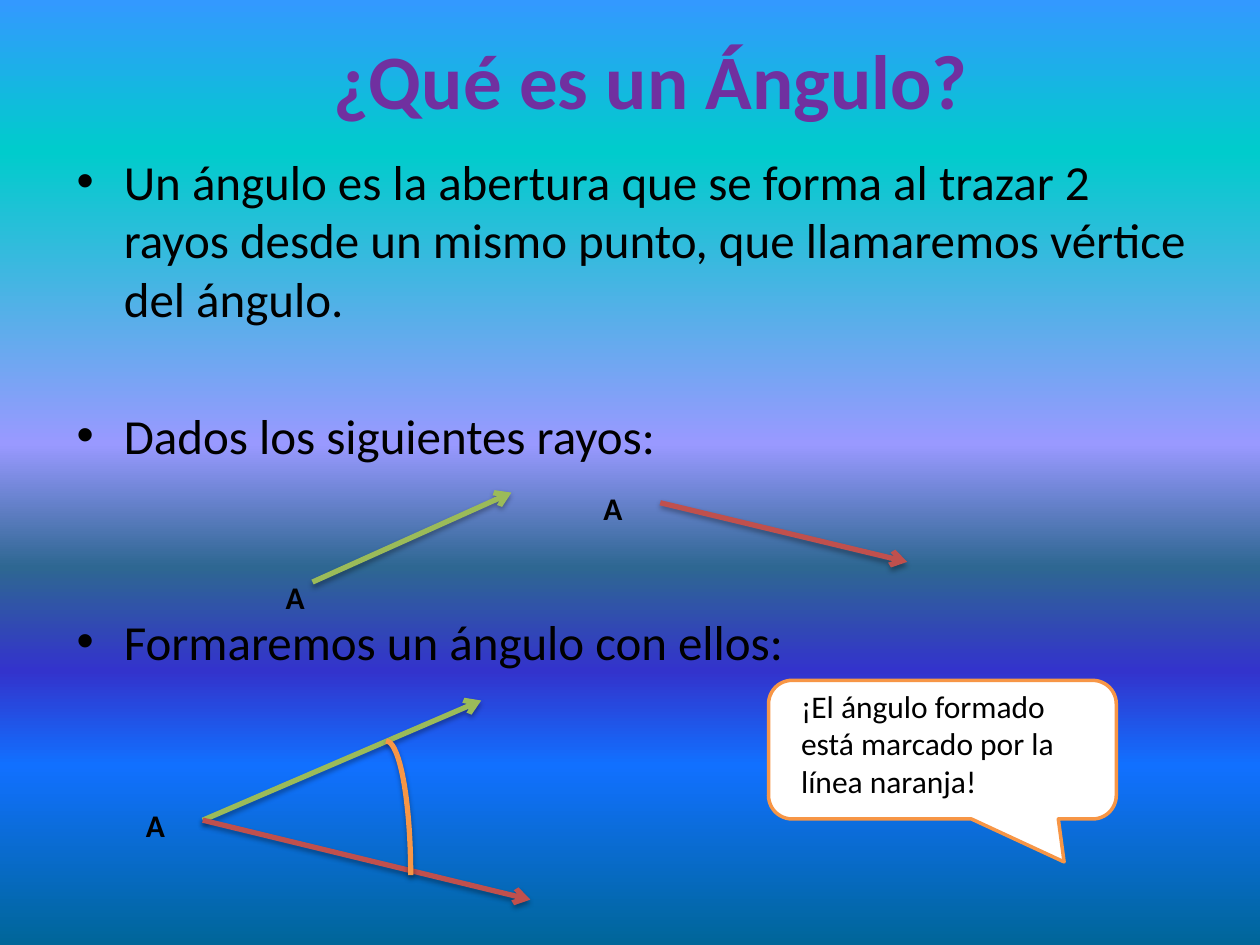
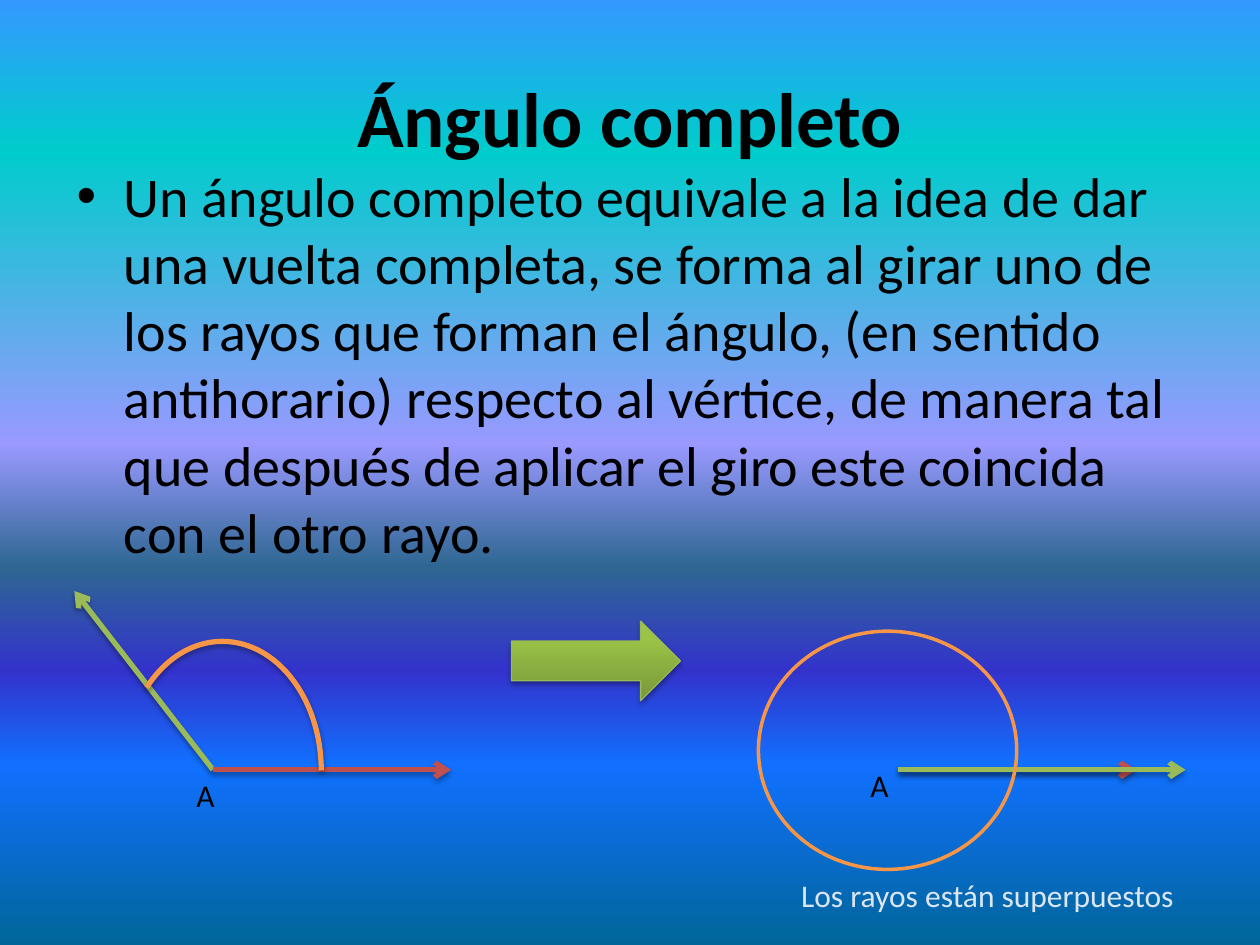
from lxml.etree import SubElement
from pptx import Presentation
from pptx.dml.color import RGBColor
from pptx.enum.shapes import MSO_CONNECTOR, MSO_SHAPE
from pptx.enum.text import MSO_ANCHOR, MSO_AUTO_SIZE, PP_ALIGN
from pptx.oxml.ns import qn
from pptx.util import Pt

HUES = {
    "black": "000000", "white": "FFFFFF", "purple": "7030A0", "pale": "DCE6F2",
    "green": "9BBB59", "red": "C0504D", "orange": "F79646", "edge": "98B955",
}
SKY = [(0, "3399FF"), (16, "00CCCC"), (47, "9999FF"), (60, "2E6792"),
       (71, "3333CC"), (81, "1170FF"), (100, "006699")]
LEAF = [(0, "779737"), (80, "9BC348"), (100, "9DC746")]
FRAME = {"word_wrap": True, "auto_size": MSO_AUTO_SIZE.NONE,
         "vertical_anchor": MSO_ANCHOR.TOP}
TITLE = {"size": Pt(44), "bold": True}
LABEL = {"size": Pt(18), "bold": False}


def hue(name):
    return RGBColor.from_string(HUES[name])


def apply(item, values):
    for key, value in values.items():
        setattr(item, key, value)


def points(*values):
    return [Pt(value) for value in values]


def node(parent, tag, **values):
    child = SubElement(parent, qn(tag))
    for key, value in values.items():
        child.set(key, str(value))
    return child


def blend(fill, root, stops, angle):
    fill.gradient()
    fill.gradient_angle = angle
    group = next(root.iter(qn("a:gsLst")))
    for stop in list(group):
        group.remove(stop)
    for place, color in stops:
        stop = node(group, "a:gs", pos=place * 1000)
        node(stop, "a:srgbClr", val=color)


def shade(shape):
    props = shape.element.spPr
    group = props.find(qn("a:effectLst"))
    if group is None:
        group = node(props, "a:effectLst")
    cast = node(group, "a:outerShdw", blurRad=Pt(3.1), dist=Pt(1.8),
                dir=5400000, rotWithShape=0)
    color = node(cast, "a:srgbClr", val=HUES["black"])
    node(color, "a:alpha", val=35000)


def stroke(line, color, width):
    line.color.rgb = hue(color)
    line.width = Pt(width)


def write(slide, box, lines, font, color="black", frame=None, align=PP_ALIGN.LEFT):
    text = slide.shapes.add_textbox(*points(*box)).text_frame
    apply(text, {**FRAME, **(frame or {})})
    for index, line in enumerate(lines):
        para = text.paragraphs[0] if index == 0 else text.add_paragraph()
        para.alignment = align
        run = para.add_run()
        run.text = line
        apply(run.font, {"name": "Calibri", **font})
        run.font.color.rgb = hue(color)
    return text


def title(slide, left, top, words, color="black"):
    write(slide, (left, top, 648, 90), [words], TITLE, color,
          {"vertical_anchor": MSO_ANCHOR.MIDDLE}, PP_ALIGN.CENTER)


def body(slide, top, size, items):
    lines = [line for line, gap in items]
    text = write(slide, (36.7, top, 648, 356.4), lines, {"size": Pt(size)})
    for para, (line, gap) in zip(text.paragraphs, items):
        para.space_before = Pt(gap)
        props = para._p.get_or_add_pPr()
        apply_indent = {"marL": Pt(27), "indent": Pt(-27)}
        for key, value in apply_indent.items():
            props.set(key, str(value))
        node(props, "a:buFont", typeface="Arial")
        node(props, "a:buChar", char="•")


def label(slide, box, words, color="black", bold=False):
    write(slide, box, [words], {**LABEL, "bold": bold}, color,
          {"auto_size": MSO_AUTO_SIZE.SHAPE_TO_FIT_TEXT})


def ray(slide, start, end, color):
    line = slide.shapes.add_connector(MSO_CONNECTOR.STRAIGHT, *points(*start, *end))
    stroke(line.line, color, 3)
    node(line.element.spPr.find(qn("a:ln")), "a:tailEnd", type="arrow")
    shade(line)


def outline(slide, kind, box, color, width, turns=()):
    shape = slide.shapes.add_shape(kind, *points(*box))
    shape.shadow.inherit = False
    shape.fill.background()
    stroke(shape.line, color, width)
    for index, turn in enumerate(turns):
        shape.adjustments[index] = turn
    return shape


def arc(slide, box, start):
    shade(outline(slide, MSO_SHAPE.ARC, box, "orange", 3, (start, 0)))


def page(deck):
    slide = deck.slides.add_slide(deck.slide_layouts[6])
    blend(slide.background.fill, slide.element, SKY, 270)
    return slide


def basics(deck):
    slide = page(deck)
    title(slide, 48, 0, "¿Qué es un Ángulo?", "purple")
    body(slide, 82.8, 28, [
        ("Un ángulo es la abertura que se forma al trazar 2 rayos desde un "
         "mismo punto, que llamaremos vértice del ángulo.", 0),
        ("Dados los siguientes rayos:", 44.5),
        ("Formaremos un ángulo con ellos:", 84),
    ])
    apex = (115.9, 468.7)
    for start, end, color in [
        ((178.6, 332.6), (292.3, 281.5), "green"),
        ((377.3, 287.3), (518.4, 321.1), "red"),
        (apex, (275, 400.3), "green"),
        (apex, (303.1, 514.1), "red"),
    ]:
        ray(slide, start, end, color)
    arc(slide, (206.6, 423.4, 28.1, 153.4), 162)
    bubble = outline(slide, MSO_SHAPE.ROUNDED_RECTANGULAR_CALLOUT,
                     (439.2, 388.8, 198.7, 79.2), "orange", 2, (0.35, 0.81, 0.17))
    bubble.fill.solid()
    bubble.fill.fore_color.rgb = hue("white")
    label(slide, (450.7, 388.8, 169.9, 72.7),
          "¡El ángulo formado está marcado por la línea naranja!")
    for left, top in [(156.2, 326.9), (337.7, 275.8), (76.3, 457.2)]:
        label(slide, (left, top, 33.8, 28.8), "A", bold=True)


def full(deck):
    slide = page(deck)
    title(slide, 36, 21.6, "Ángulo completo")
    body(slide, 88.6, 32, [
        ("Un ángulo completo equivale a la idea de dar una vuelta completa, "
         "se forma al girar uno de los rayos que forman el ángulo, (en sentido "
         "antihorario) respecto al vértice, de manera tal que después de "
         "aplicar el giro este coincida con el otro rayo.", 0),
    ])
    base = 439.9
    apex, pivot = (121.7, base), (513.4, base)
    ray(slide, apex, (42.5, 337.7), "green")
    ray(slide, apex, (257.8, base), "red")
    arc(slide, (70.6, 366.5, 113, 147.6), 136.55)
    arrow = outline(slide, MSO_SHAPE.RIGHT_ARROW, (292.3, 355, 96.5, 45.4), "edge", 0.75)
    blend(arrow.fill, arrow.element, LEAF, 90)
    shade(arrow)
    ray(slide, pivot, (649.4, base), "red")
    ray(slide, pivot, (677.5, base), "green")
    outline(slide, MSO_SHAPE.OVAL, (433.4, 360.7, 147.6, 136.1), "orange", 2)
    for left, top in [(105.1, base), (490.3, 434.2)]:
        label(slide, (left, top, 45.4, 28.8), "A")
    label(slide, (450.7, 496.8, 244.1, 28.8), "Los rayos están superpuestos", "pale")


def main():
    deck = Presentation()
    apply(deck, {"slide_width": Pt(720), "slide_height": Pt(540)})
    basics(deck)
    full(deck)
    deck.save("out.pptx")


if __name__ == "__main__":
    main()
